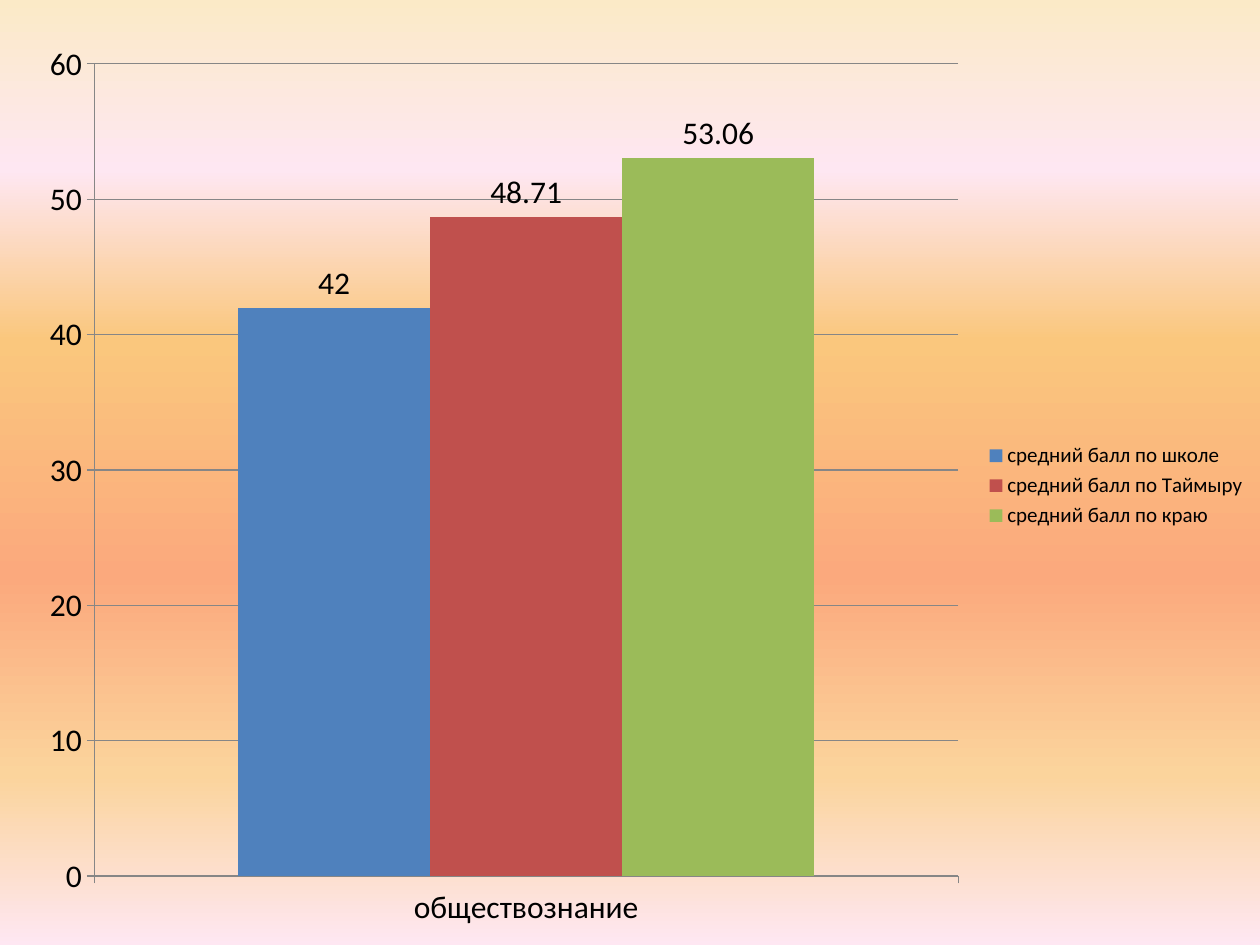
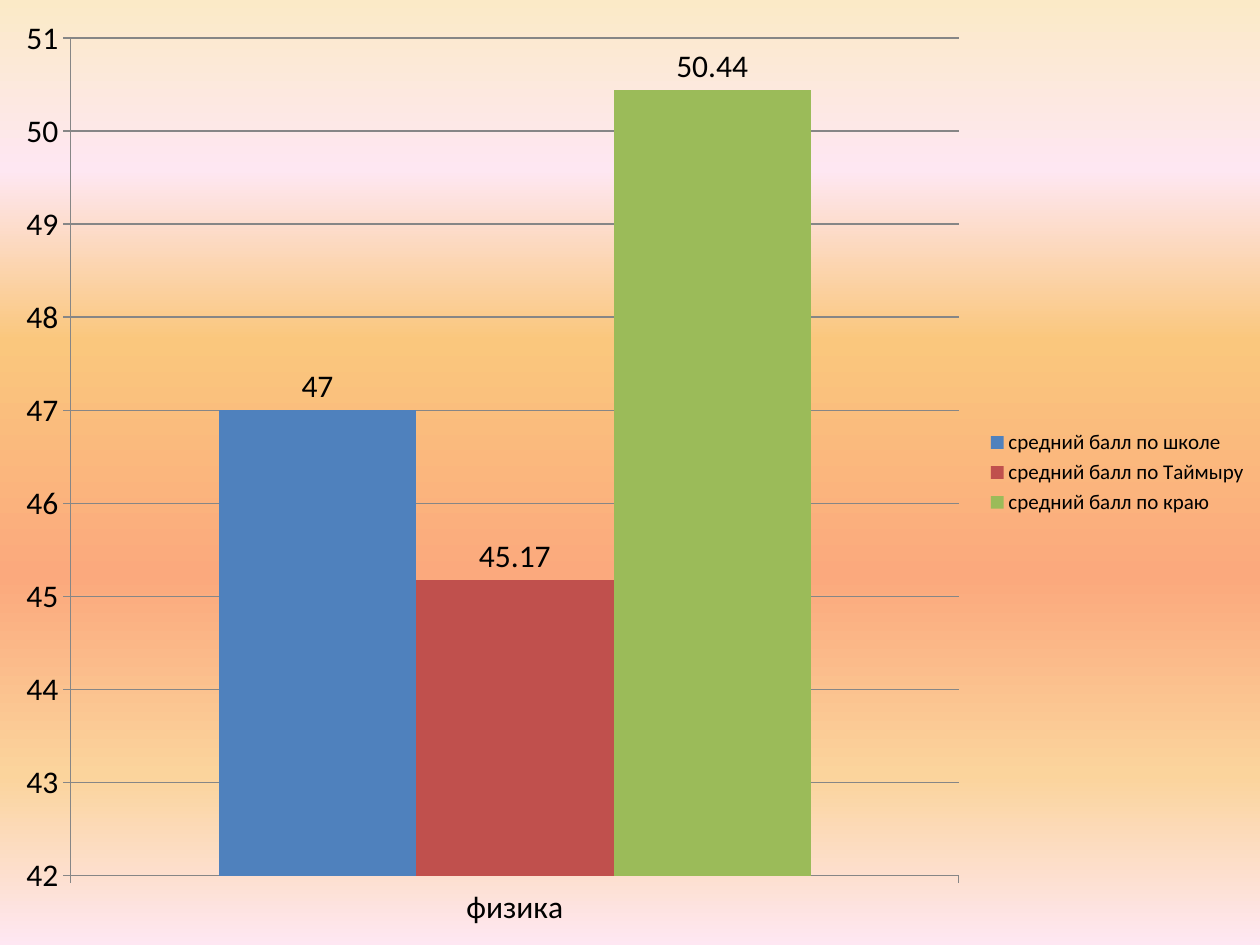
from dataclasses import dataclass
from typing import Any

from lxml.etree import SubElement
from pptx import Presentation
from pptx.chart.data import CategoryChartData
from pptx.dml.color import RGBColor
from pptx.enum.chart import XL_CHART_TYPE, XL_LABEL_POSITION, XL_LEGEND_POSITION, XL_TICK_MARK
from pptx.oxml.ns import qn
from pptx.util import Inches, Pt

COLORS = {
    "text": "000000",
    "axis": "868686",
    "school": "4F81BD",
    "taimyr": "C0504D",
    "region": "9BBB59",
    "cream": "FBEAC7",
    "pink": "FEE7F2",
    "amber": "FAC77D",
    "coral": "FBA97D",
    "sand": "FBD49C",
}
FONT = "Calibri"
BACKGROUND_STOPS = [
    (0, "cream"), (18, "pink"), (36, "amber"),
    (61, "coral"), (82, "sand"), (100, "pink"),
]
SCORE_GROUPS = [
    ("средний балл по школе", "school"),
    ("средний балл по Таймыру", "taimyr"),
    ("средний балл по краю", "region"),
]


@dataclass(frozen=True)
class SubjectScores:
    subject: str
    scores: tuple[float, float, float]
    left: float
    top: float
    width: float
    height: float
    scale_min: float
    scale_max: float
    scale_step: float


SUBJECTS = [
    SubjectScores("обществознание", (42, 48.71, 53.06), 0.2, 0.21, 9.8, 7.29, 0, 60, 10),
    SubjectScores("физика", (47, 45.17, 50.44), 0.01, 0, 10, 7.5, 42, 51, 1),
]


def rgb(name: str) -> RGBColor:
    return RGBColor.from_string(COLORS[name])


def format_text(text: Any, *, size: float = 18, color: str = "text", bold: bool = False) -> None:
    text.font.name = FONT
    text.font.size = Pt(size)
    text.font.bold = bold
    text.font.color.rgb = rgb(color)


def format_line(line: Any) -> None:
    line.color.rgb = rgb("axis")
    line.width = Pt(0.75)


def paint_background(master: Any) -> None:
    fill = master.background.fill
    fill.gradient()
    gradient = next(master.element.iter(qn("a:gradFill")))
    for child in list(gradient):
        gradient.remove(child)
    stops = SubElement(gradient, qn("a:gsLst"))
    for percent, name in BACKGROUND_STOPS:
        stop = SubElement(stops, qn("a:gs"), pos=str(percent * 1000))
        SubElement(stop, qn("a:srgbClr"), val=COLORS[name])
    SubElement(gradient, qn("a:lin"), ang="5400000", scaled="0")


def add_score_chart(slide: Any, subject: SubjectScores) -> None:
    data = CategoryChartData()
    data.categories = [subject.subject]
    for (label, _), score in zip(SCORE_GROUPS, subject.scores):
        data.add_series(label, [score])
    chart = slide.shapes.add_chart(
        XL_CHART_TYPE.COLUMN_CLUSTERED,
        Inches(subject.left), Inches(subject.top),
        Inches(subject.width), Inches(subject.height), data,
    ).chart
    format_text(chart)
    chart.has_title = False

    chart.has_legend = True
    chart.legend.position = XL_LEGEND_POSITION.RIGHT
    chart.legend.include_in_layout = False
    format_text(chart.legend, size=12)

    for axis in (chart.category_axis, chart.value_axis):
        axis.major_tick_mark = XL_TICK_MARK.OUTSIDE
        axis.minor_tick_mark = XL_TICK_MARK.NONE
        format_line(axis.format.line)
        format_text(axis.tick_labels)
    chart.value_axis.minimum_scale = subject.scale_min
    chart.value_axis.maximum_scale = subject.scale_max
    chart.value_axis.major_unit = subject.scale_step
    chart.value_axis.has_major_gridlines = True
    format_line(chart.value_axis.major_gridlines.format.line)

    plot = chart.plots[0]
    plot.gap_width = 150
    plot.overlap = 0
    plot.vary_by_categories = False
    for series, (_, color) in zip(plot.series, SCORE_GROUPS):
        series.format.fill.solid()
        series.format.fill.fore_color.rgb = rgb(color)
        series.data_labels.show_value = True
        series.data_labels.position = XL_LABEL_POSITION.OUTSIDE_END
        format_text(series.data_labels)


def main() -> None:
    prs = Presentation()
    prs.slide_width, prs.slide_height = Inches(10), Inches(7.5)
    paint_background(prs.slide_master)
    blank_layout = prs.slide_layouts[6]
    for subject in SUBJECTS:
        add_score_chart(prs.slides.add_slide(blank_layout), subject)
    prs.save("out.pptx")


if __name__ == "__main__":
    main()
